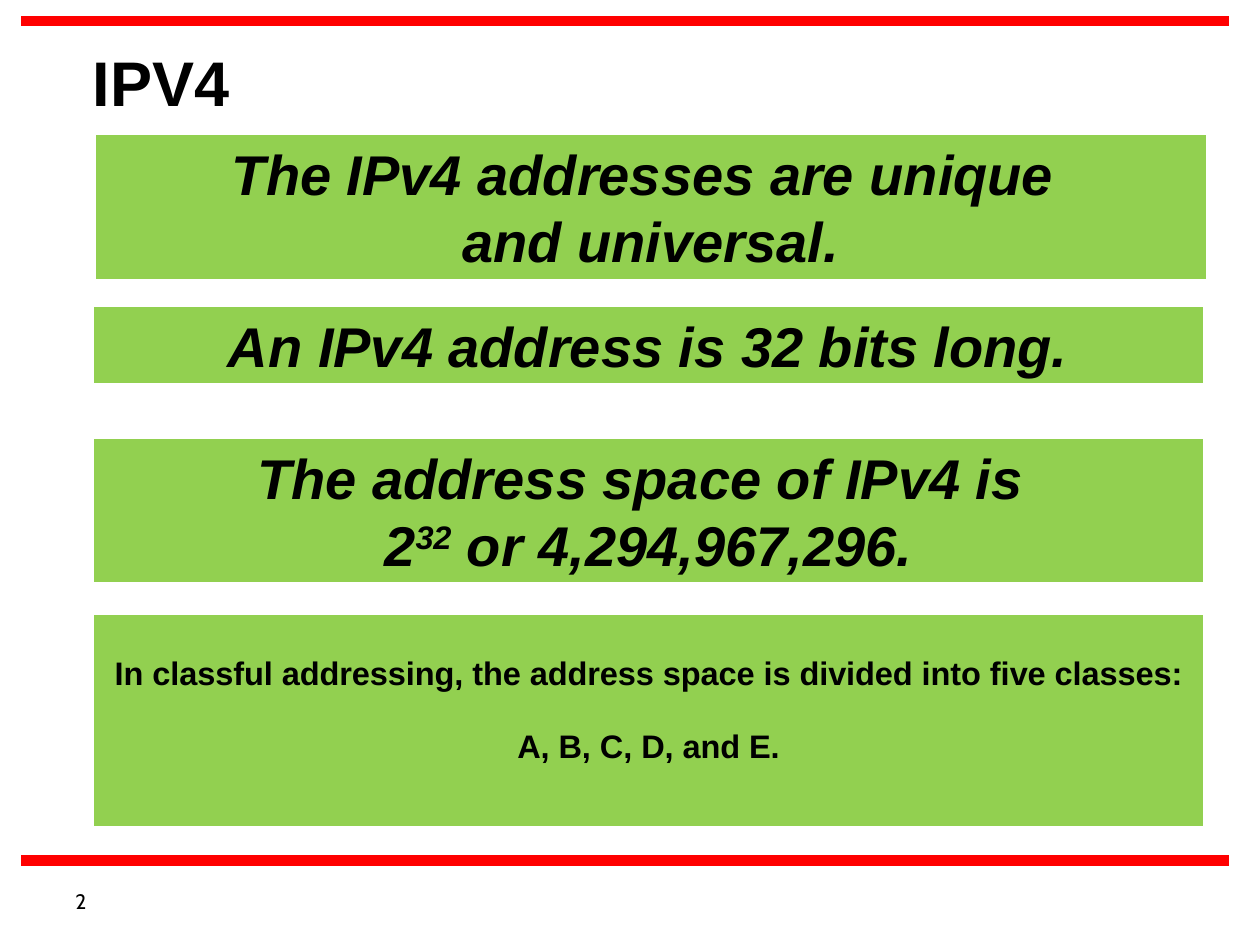
from lxml.etree import SubElement
from pptx import Presentation
from pptx.dml.color import RGBColor
from pptx.enum.shapes import MSO_CONNECTOR as CONNECTOR, MSO_SHAPE as SHAPE
from pptx.enum.text import MSO_ANCHOR as ANCHOR, MSO_AUTO_SIZE as AUTO_SIZE, PP_ALIGN as ALIGN
from pptx.oxml.ns import qn
from pptx.util import Cm, Pt


def color(hex_code):
    return RGBColor.from_string(hex_code)


def write(frame, paragraphs, font="Arial", size=32, ink="000000", bold=True, italic=False,
          align=ALIGN.LEFT, anchor=ANCHOR.TOP, baseline=0, wrap=True):
    """Fill frame; a paragraph is a list of lines, a line a list of (text, baseline) or plain text."""
    frame.auto_size = AUTO_SIZE.NONE
    frame.word_wrap = wrap
    frame.vertical_anchor = anchor
    for number, lines in enumerate(paragraphs):
        paragraph = frame.add_paragraph() if number else frame.paragraphs[0]
        paragraph.alignment = align
        for row, line in enumerate(lines):
            if row:
                paragraph.add_line_break()
            for piece in line:
                text, shift = (piece, baseline) if isinstance(piece, str) else piece
                run = paragraph.add_run()
                run.text = text
                run.font.name = font
                run.font.size = Pt(size)
                run.font.bold = bold
                run.font.italic = italic
                run.font.color.rgb = color(ink)
                if shift:
                    run.font._element.set("baseline", str(shift * 1000))


class FactSlide:
    """Style of the fact slides together with the slide being built."""
    panel_fill, panel_edge, rule_color = "92D050", "FFFFFF", "FF0000"
    panel_width = 22.43

    def __init__(self, deck):
        self.slide = deck.slides.add_slide(deck.slide_layouts[5])

    def title(self, text, left, top, width, height):
        heading = self.slide.shapes.title
        heading.left, heading.top, heading.width, heading.height = map(Cm, (left, top, width, height))
        heading.text_frame.margin_left = Cm(0.6)
        write(heading.text_frame, [[[text]]], size=36, wrap=False)

    def panel(self, left, top, height, paragraphs, **style):
        panel = self.slide.shapes.add_shape(
            SHAPE.RECTANGLE, Cm(left), Cm(top), Cm(self.panel_width), Cm(height))
        panel.shadow.inherit = False
        panel.fill.solid()
        panel.fill.fore_color.rgb = color(self.panel_fill)
        panel.line.color.rgb = color(self.panel_edge)
        panel.line.width = Pt(2)
        write(panel.text_frame, paragraphs, align=ALIGN.CENTER, **style)

    def rule(self, y):
        rule = self.slide.shapes.add_connector(
            CONNECTOR.STRAIGHT, Cm(0.43), Cm(y), Cm(24.77), Cm(y))
        rule.line.color.rgb = color(self.rule_color)
        rule.line.width = Pt(6)
        SubElement(rule._element.spPr, qn("a:effectLst"))

    def page_number(self, number):
        footer = self.slide.shapes.add_textbox(Cm(1.27), Cm(17.65), Cm(5.92), Cm(1.02))
        write(footer.text_frame, [[[str(number)]]], font="Cabin", size=12, bold=False,
              anchor=ANCHOR.MIDDLE)


def main():
    deck = Presentation()
    deck.slide_width, deck.slide_height = Cm(25.4), Cm(19.05)

    page = FactSlide(deck)
    page.page_number(2)
    page.title("IPV4", 1.27, 0.74, 3.66, 1.8)
    for y in (0.42, 17.35):
        page.rule(y)

    facts = [
        (1.91, 2.69, 2.97, [["The IPv4 addresses are unique "], ["and universal."]]),
        (1.86, 6.15, 1.6, [["An IPv4 address is 32 bits long."]]),
        (1.86, 8.81, 2.96, [["The address space of IPv4 is "],
                            ["2", ("32", 30), " or 4,294,967,296."]]),
    ]
    for left, top, height, lines in facts:
        page.panel(left, top, height, [lines], italic=True)

    classes = [
        [["In classful addressing, the address space is divided into five classes:"]],
        [["A, B, C, D, and E."]],
    ]
    page.panel(1.86, 12.37, 4.31, classes, baseline=-18)

    deck.save("out.pptx")


if __name__ == "__main__":
    main()
